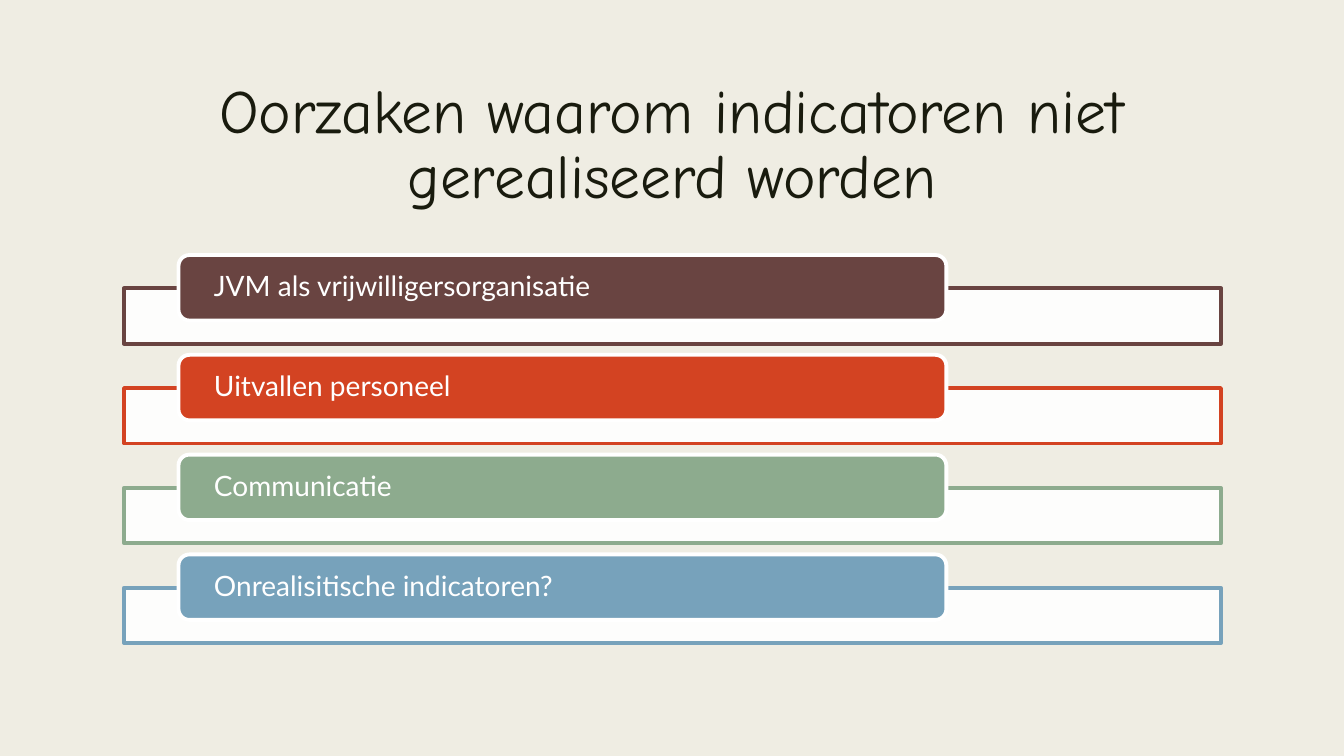
from pptx import Presentation
from pptx.dml.color import RGBColor
from pptx.enum.shapes import MSO_SHAPE as Preset
from pptx.enum.text import MSO_ANCHOR as Anchor, PP_ALIGN as Align
from pptx.oxml.ns import qn
from pptx.util import Inches, Pt
from lxml import etree

COLORS = {
    "background": "EFEDE3",
    "title": "191B0E",
    "white": "FFFFFF",
    "brown": "694441",
    "red": "D34322",
    "green": "8DAB8E",
    "blue": "77A2BB",
}
CAUSES = [
    ("JVM als vrijwilligersorganisatie", "brown"),
    ("Uitvallen personeel", "red"),
    ("Communicatie", "green"),
    ("Onrealisitische indicatoren?", "blue"),
]
ROW_PITCH = 0.99


def color(name):
    return RGBColor.from_string(COLORS[name])


def write_text(shape, text, font, size, color_name, align, line_spacing):
    paragraph = shape.text_frame.paragraphs[0]
    paragraph.text = text
    paragraph.alignment = align
    paragraph.line_spacing = line_spacing
    run_font = paragraph.runs[0].font
    run_font.name = font
    run_font.size = Pt(size)
    run_font.color.rgb = color(color_name)


def add_box(slide, preset, left, top, width, height, fill, line):
    shape = slide.shapes.add_shape(
        preset, Inches(left), Inches(top), Inches(width), Inches(height))
    shape.shadow.inherit = False
    shape.fill.solid()
    shape.fill.fore_color.rgb = color(fill)
    shape.line.color.rgb = color(line)
    shape.line.width = Pt(2.75)
    return shape


def set_opacity(shape, percent):
    fill_color = shape.fill._xPr.find(qn("a:solidFill"))[0]
    etree.SubElement(fill_color, qn("a:alpha"), val=str(percent * 1000))


def add_title(slide, left, top, width, height):
    title = slide.shapes.add_textbox(
        Inches(left), Inches(top), Inches(width), Inches(height))
    title.text_frame.word_wrap = True
    write_text(title, "Oorzaken waarom indicatoren niet gerealiseerd worden",
               "Comic Neue", 44, "title", Align.CENTER, 0.89)


def add_cause(slide, left, top, width, text, accent):
    """Draw an outlined bar with a rounded label over its top edge."""
    bar = add_box(slide, Preset.RECTANGLE, left, top + 0.33, width, 0.55,
                  "white", accent)
    set_opacity(bar, 90)
    label = add_box(slide, Preset.ROUNDED_RECTANGLE, left + 0.54, top,
                    width * 0.7, 0.65, accent, "white")
    frame = label.text_frame
    frame.word_wrap = True
    frame.vertical_anchor = Anchor.MIDDLE
    frame.margin_left = frame.margin_right = Inches(0.32)
    frame.margin_top = frame.margin_bottom = 0
    write_text(label, text, "Lato", 20, "white", Align.LEFT, 0.9)


def add_causes(slide, left, top, width):
    for row, (text, accent) in enumerate(CAUSES):
        add_cause(slide, left, top + row * ROW_PITCH, width, text, accent)


def main():
    presentation = Presentation()
    presentation.slide_width = Inches(13.33)
    presentation.slide_height = Inches(7.5)
    slide = presentation.slides.add_slide(presentation.slide_layouts[6])
    slide.background.fill.solid()
    slide.background.fill.fore_color.rgb = color("background")
    add_title(slide, 0.7, 0.75, 11.93, 1.62)
    add_causes(slide, 1.23, 2.53, 10.88)
    presentation.save("out.pptx")


if __name__ == "__main__":
    main()
